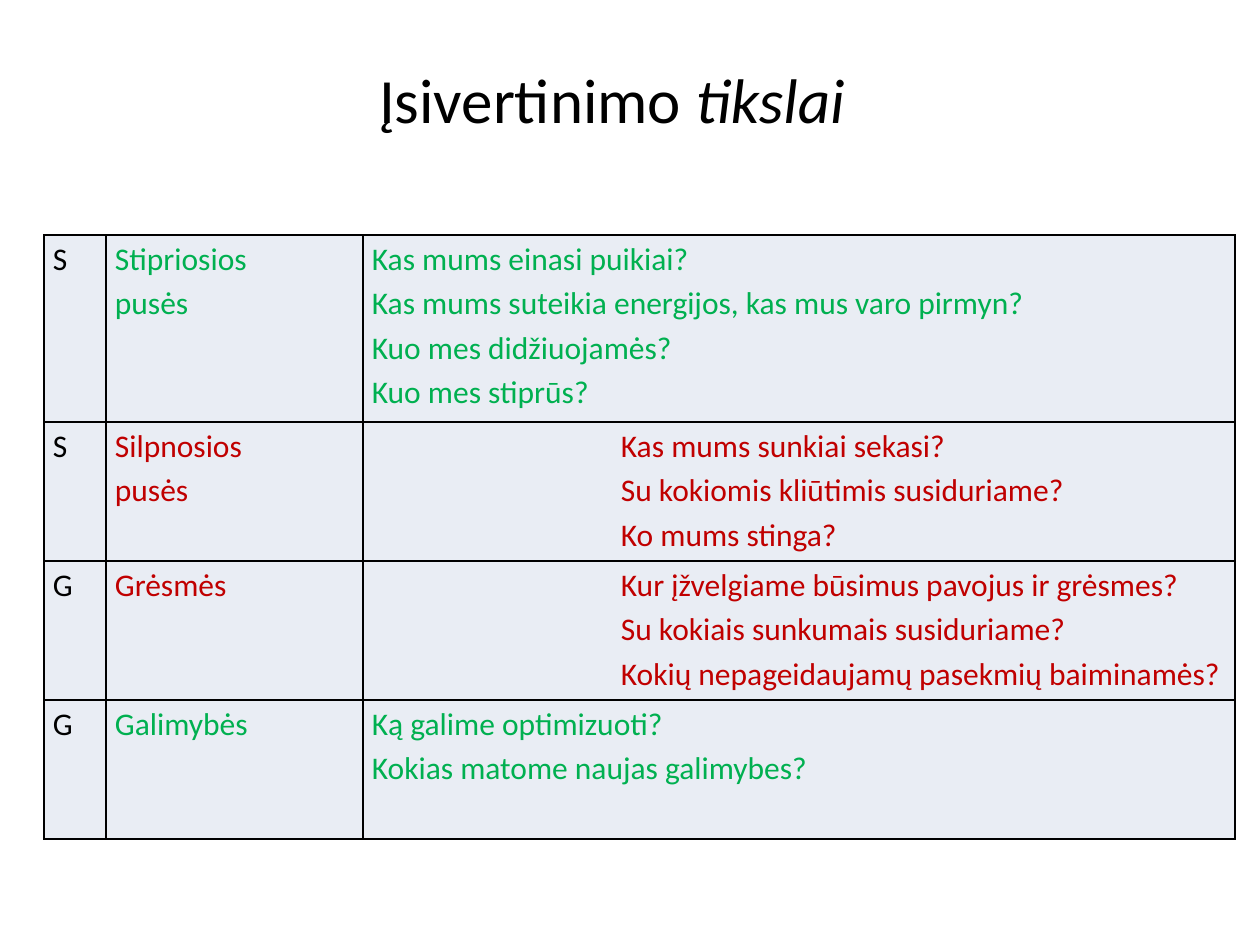
from lxml import etree
from pptx import Presentation
from pptx.dml.color import RGBColor
from pptx.enum.text import MSO_ANCHOR, PP_ALIGN
from pptx.oxml.ns import qn
from pptx.util import Emu, Pt

TOP = MSO_ANCHOR.TOP
LEFT, CENTER = PP_ALIGN.LEFT, PP_ALIGN.CENTER

BLACK = RGBColor(0x00, 0x00, 0x00)
GREEN = RGBColor(0x00, 0xB0, 0x50)
RED = RGBColor(0xC0, 0x00, 0x00)
PALE = RGBColor(0xE9, 0xED, 0xF4)

TITLE_ONLY = 5
EMU_PER_PX = 914400 / 126


def px(n):
    return Emu(round(n * EMU_PER_PX))


class SlideBuilder:
    """Holds the font, the cell format and the current slide."""

    font = "Calibri"
    cell_format = {"margin_left": px(9), "margin_right": px(9),
                   "margin_top": 0, "margin_bottom": 0, "vertical_anchor": TOP}

    def __init__(self, prs):
        self.s = prs.slides.add_slide(prs.slide_layouts[TITLE_ONLY])

    def add_run(self, p, text, size, color, italic=False):
        r = p.add_run()
        r.text = text
        for name, value in {"name": self.font, "size": Pt(size), "italic": italic}.items():
            setattr(r.font, name, value)
        r.font.color.rgb = color

    def title(self, box, runs, size, margin_right):
        sp = self.s.shapes.title
        sp.left, sp.top, sp.width, sp.height = map(px, box)
        tf = sp.text_frame
        for name, value in {"vertical_anchor": TOP, "margin_top": 0,
                            "margin_right": px(margin_right), "word_wrap": True}.items():
            setattr(tf, name, value)
        p = tf.paragraphs[0]
        p.alignment = CENTER
        for text, italic in runs:
            self.add_run(p, text, size, BLACK, italic)

    def borders(self, cell):
        tcPr = cell._tc.get_or_add_tcPr()
        for i, side in enumerate(("lnL", "lnR", "lnT", "lnB")):
            ln = etree.Element(qn(f"a:{side}"), w=str(Pt(1)))
            fill = etree.SubElement(ln, qn("a:solidFill"))
            etree.SubElement(fill, qn("a:srgbClr"), val=str(BLACK))
            tcPr.insert(i, ln)

    def cell(self, cell, lines, color, indent=0):
        for name, value in self.cell_format.items():
            setattr(cell, name, value)
        cell.fill.solid()
        cell.fill.fore_color.rgb = PALE
        self.borders(cell)
        tf = cell.text_frame
        for i, line in enumerate(lines):
            p = tf.add_paragraph() if i else tf.paragraphs[0]
            p.alignment, p.line_spacing = LEFT, 1.15
            if indent:
                p._p.get_or_add_pPr().set("marL", str(px(indent)))
            self.add_run(p, line, 18, color)

    def table(self, x, y, widths, heights, rows):
        frame = self.s.shapes.add_table(len(heights), len(widths), px(x), px(y),
                                        px(sum(widths)), px(sum(heights)))
        table = frame.table
        for column, width in zip(table.columns, widths):
            column.width = px(width)
        for r, (height, row) in enumerate(zip(heights, rows)):
            letter, heading, questions, color, indent = row
            table.rows[r].height = px(height)
            self.cell(table.cell(r, 0), [letter], BLACK)
            self.cell(table.cell(r, 1), heading, color)
            self.cell(table.cell(r, 2), questions, color, indent)


# Letter, heading lines, question lines, colour, question indent
SWOT = [
    ("S", ["Stipriosios", "pusės"],
     ["Kas mums einasi puikiai?",
      "Kas mums suteikia energijos, kas mus varo pirmyn?",
      "Kuo mes didžiuojamės?",
      "Kuo mes stiprūs?"], GREEN, 0),
    ("S", ["Silpnosios", "pusės"],
     ["Kas mums sunkiai sekasi?",
      "Su kokiomis kliūtimis susiduriame?",
      "Ko mums stinga?"], RED, 249),
    ("G", ["Grėsmės"],
     ["Kur įžvelgiame būsimus pavojus ir grėsmes?",
      "Su kokiais sunkumais susiduriame?",
      "Kokių nepageidaujamų pasekmių baiminamės?"], RED, 249),
    ("G", ["Galimybės"],
     ["Ką galime optimizuoti?",
      "Kokias matome naujas galimybes?"], GREEN, 0),
]


def main():
    prs = Presentation()
    prs.slide_width, prs.slide_height = px(1260), px(945)
    slide = SlideBuilder(prs)

    # Title, the last word in italics
    slide.title((35, 60, 1181, 129), [("Įsivertinimo ", False), ("tikslai", True)],
                size=36, margin_right=40)

    # Strengths, weaknesses, threats and opportunities
    slide.table(44, 235, [62, 257, 872], [187] + [139] * 3, SWOT)

    prs.save("out.pptx")


if __name__ == "__main__":
    main()
